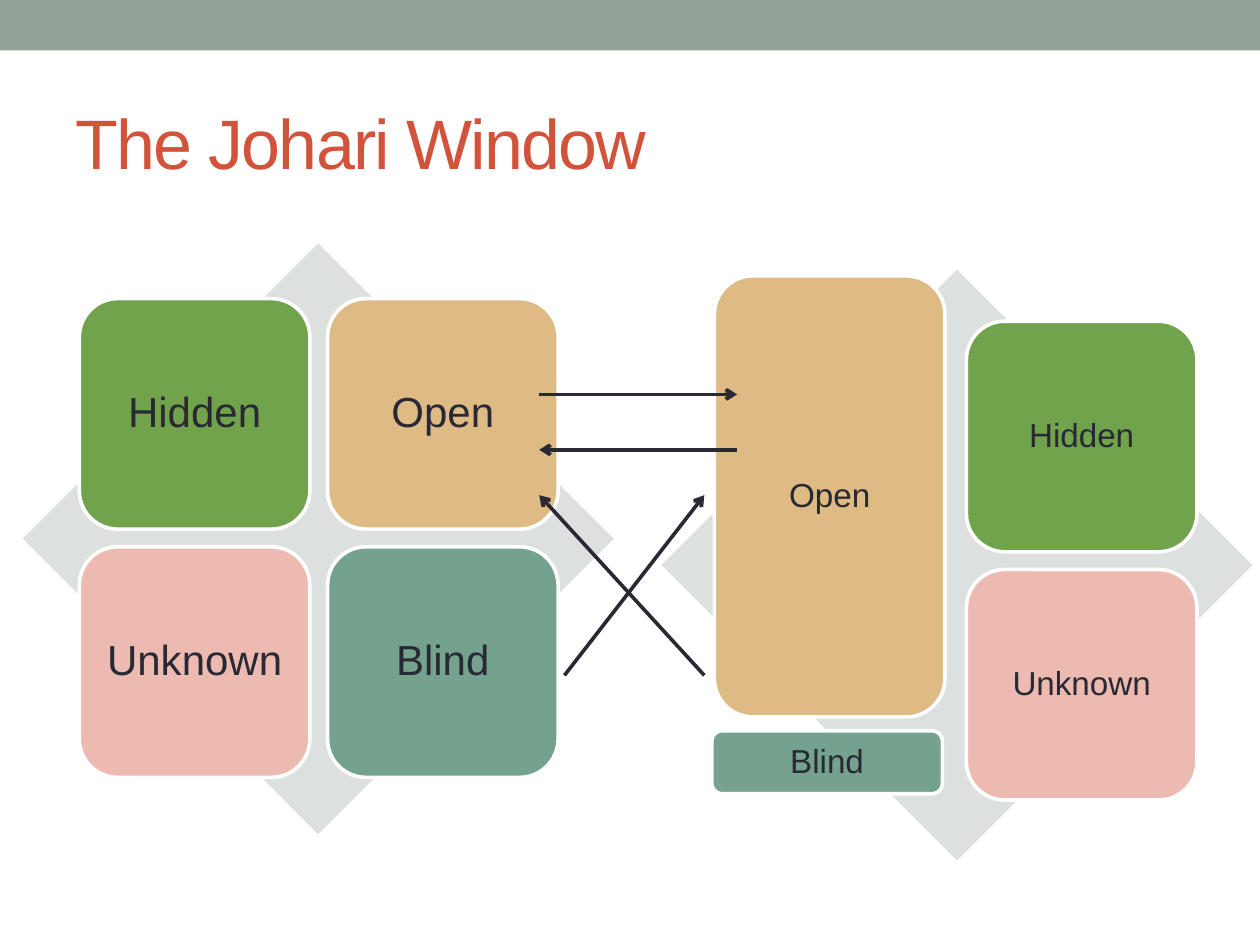
from dataclasses import dataclass

from lxml import etree
from pptx import Presentation
from pptx.dml.color import RGBColor
from pptx.enum.shapes import MSO_CONNECTOR, MSO_SHAPE
from pptx.enum.text import MSO_ANCHOR, PP_ALIGN
from pptx.oxml.ns import qn
from pptx.util import Inches, Pt

RECTANGLE = MSO_SHAPE.RECTANGLE
DIAMOND = MSO_SHAPE.DIAMOND
ROUNDED = MSO_SHAPE.ROUNDED_RECTANGLE
STRAIGHT = MSO_CONNECTOR.STRAIGHT
MIDDLE = MSO_ANCHOR.MIDDLE
LEFT, CENTER = PP_ALIGN.LEFT, PP_ALIGN.CENTER


@dataclass(frozen=True)
class Theme:
    font: str = "Arial"
    title: str = "D2533C"
    ink: str = "292934"
    band: str = "93A299"
    diamond: str = "DCE0DE"
    border: str = "FFFFFF"
    hidden: str = "71A24C"
    open: str = "DEBA84"
    unknown: str = "EDBAB1"
    blind: str = "74A28E"
    title_size: int = 40
    before_size: int = 24
    after_size: int = 19
    line_width: float = 2.08


class SlideBuilder:
    def __init__(self, slide, theme):
        self.slide = slide
        self.theme = theme

    def style_text(self, frame, text, size, color, align):
        frame.text = text
        frame.word_wrap = True
        frame.vertical_anchor = MIDDLE
        para = frame.paragraphs[0]
        para.alignment = align
        span = para.runs[0]
        span.font.name = self.theme.font
        span.font.size = Pt(size)
        span.font.color.rgb = RGBColor.from_string(color)
        return span

    def title(self, text, left, top, width, height):
        box = self.slide.shapes.title
        box.left, box.top = Inches(left), Inches(top)
        box.width, box.height = Inches(width), Inches(height)
        span = self.style_text(
            box.text_frame, text, self.theme.title_size, self.theme.title, LEFT
        )
        span.font._element.set("spc", "-100")

    def group(self):
        return self.slide.shapes.add_group_shape().shapes

    def shape(self, parent, kind, color, left, top, width, height):
        box = parent.add_shape(
            kind, Inches(left), Inches(top), Inches(width), Inches(height)
        )
        box.shadow.inherit = False
        box.fill.solid()
        box.fill.fore_color.rgb = RGBColor.from_string(color)
        box.line.fill.background()
        return box

    def pane(self, parent, name, size, inset, left, top, width, height):
        color = getattr(self.theme, name.lower())
        box = self.shape(parent, ROUNDED, color, left, top, width, height)
        box.line.color.rgb = RGBColor.from_string(self.theme.border)
        box.line.width = Pt(self.theme.line_width)
        frame = box.text_frame
        frame.margin_left = frame.margin_right = Inches(inset)
        frame.margin_top = frame.margin_bottom = Inches(inset)
        self.style_text(frame, name, size, self.theme.ink, CENTER)
        frame.paragraphs[0].line_spacing = 0.9

    def arrow(self, start, end):
        points = [Inches(value) for value in (*start, *end)]
        connector = self.slide.shapes.add_connector(STRAIGHT, *points)
        connector.line.color.rgb = RGBColor.from_string(self.theme.ink)
        connector.line.width = Pt(self.theme.line_width)
        outline = connector.line._get_or_add_ln()
        etree.SubElement(outline, qn("a:tailEnd"), type="arrow")
        properties = connector._element.spPr
        etree.SubElement(properties, qn("a:effectLst"))


def main():
    deck = Presentation()
    deck.slide_width, deck.slide_height = Inches(10), Inches(7.5)
    theme = Theme()
    page = SlideBuilder(deck.slides.add_slide(deck.slide_layouts[5]), theme)

    page.shape(page.slide.shapes, RECTANGLE, theme.band, 0, 0, 10, 0.4)
    page.title("The Johari Window", 0.5, 0.58, 9, 1.08)

    diamond_side, pane_side, pitch = 4.69, 1.83, 1.97

    before = page.group()
    page.shape(
        before, DIAMOND, theme.diamond, 0.18, 1.93, diamond_side, diamond_side
    )
    for index, name in enumerate(("Hidden", "Open", "Unknown", "Blind")):
        row, column = divmod(index, 2)
        page.pane(
            before, name, theme.before_size, 0.1,
            0.63 + column * pitch, 2.37 + row * pitch, pane_side, pane_side,
        )

    after = page.group()
    page.shape(
        after, DIAMOND, theme.diamond, 5.25, 2.14, diamond_side, diamond_side
    )
    for name, left, top, height in (
        ("Hidden", 7.67, 2.55, pane_side),
        ("Open", 5.67, 2.19, 3.5),
        ("Unknown", 7.67, 2.55 + pitch, pane_side),
        ("Blind", 5.65, 5.8, 0.5),
    ):
        page.pane(
            after, name, theme.after_size, 0.08, left, top, pane_side, height
        )

    for start, end in (
        ((4.28, 3.13), (5.85, 3.13)),
        ((5.85, 3.57), (4.28, 3.57)),
        ((5.59, 5.36), (4.28, 3.93)),
        ((4.48, 5.36), (5.59, 3.93)),
    ):
        page.arrow(start, end)

    deck.save("out.pptx")


if __name__ == "__main__":
    main()
